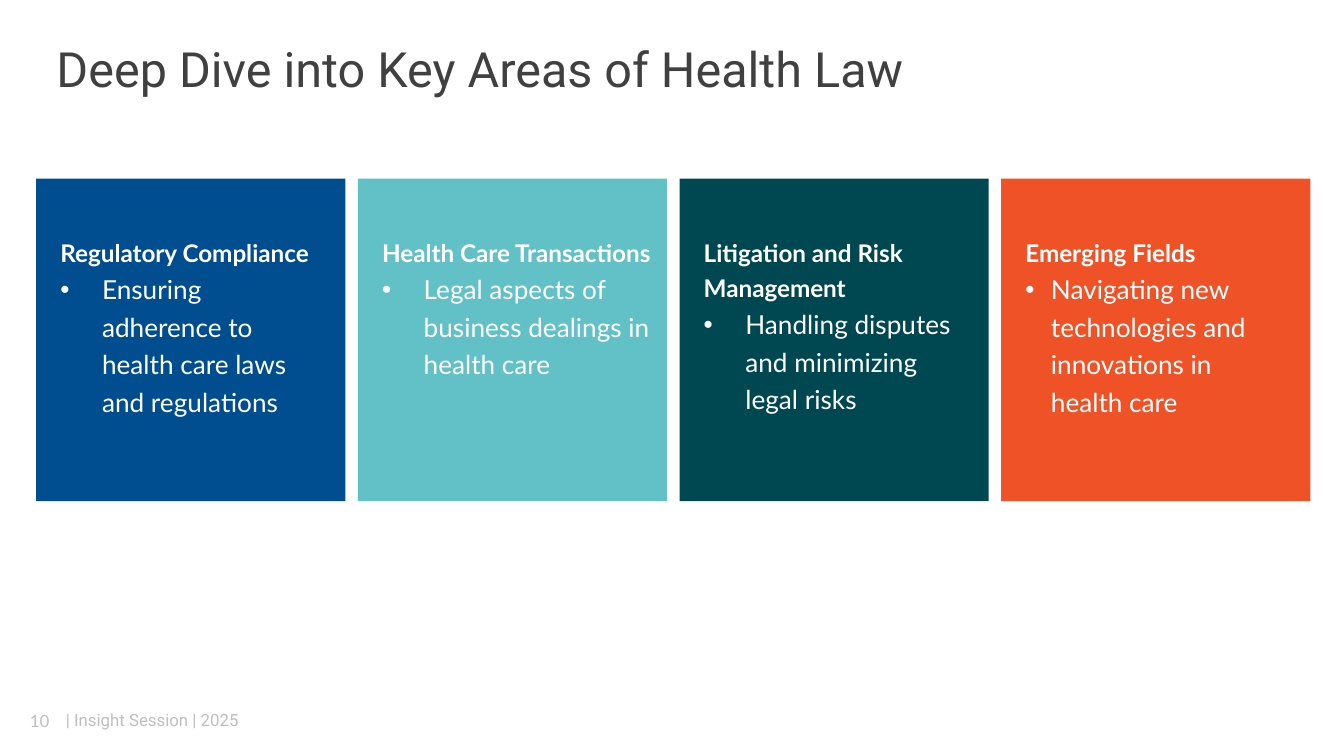
from lxml.etree import SubElement
from pptx import Presentation
from pptx.dml.color import RGBColor
from pptx.enum.shapes import MSO_SHAPE as Shape
from pptx.enum.text import MSO_ANCHOR as Anchor, MSO_AUTO_SIZE as Fit, PP_ALIGN as Align
from pptx.oxml.ns import qn
from pptx.util import Inches, Pt

TITLE = "Deep Dive into Key Areas of Health Law"
CARDS = [
    ("004D8F", "Regulatory Compliance",
     "Ensuring adherence to health care laws and regulations", 1.93, 0.31),
    ("62C0C7", "Health Care Transactions",
     "Legal aspects of business dealings in health care", 2.07, 0.31),
    ("004851", "Litigation and Risk Management",
     "Handling disputes and minimizing legal risks", 1.93, 0.31),
    ("F05228", "Emerging Fields",
     "Navigating new technologies and innovations in health care", 1.93, 0.19),
]
FOOT = [
    ("10", "Lato", (0.08, 5.21, 0.43, 0.3), (0.1, 0.05), Align.CENTER),
    ("| Insight Session | 2025", "Roboto", (0.49, 5.28, 2, 0.15), (0, 0), Align.LEFT),
]
LEFT, LAST, TOP, WIDE, HIGH = 0.27, 7.45, 1.33, 2.3, 2.4


def tint(code):
    """Turn a hex string into a colour."""
    return RGBColor.from_string(code)


def write(para, text, face, size, code, bold=False):
    """Add one styled run to a paragraph."""
    run = para.add_run()
    run.text = text
    font = run.font
    font.name, font.size, font.bold = face, Pt(size), bold
    font.color.rgb = tint(code)


def setup(frame, inset, anchor):
    """Set wrapping, insets and anchor of a text frame."""
    frame.word_wrap = True
    frame.auto_size = Fit.NONE
    frame.vertical_anchor = anchor
    frame.margin_left = frame.margin_right = Inches(inset[0])
    frame.margin_top = frame.margin_bottom = Inches(inset[1])
    return frame


def place(shape, box):
    """Move a shape to a box given in inches."""
    shape.left, shape.top, shape.width, shape.height = map(Inches, box)


def dot(para, indent):
    """Give a paragraph a hanging round bullet."""
    props = para._p.get_or_add_pPr()
    props.set("marL", str(Inches(indent)))
    props.set("indent", str(-Inches(indent)))
    SubElement(props, qn("a:buFont"), typeface="Arial")
    SubElement(props, qn("a:buChar"), char="•")


def card(slide, left, code, head, body, width, indent):
    """Draw one coloured card with its heading and bullet."""
    tile = slide.shapes.add_shape(Shape.RECTANGLE, *map(Inches, (left, TOP, WIDE, HIGH)))
    tile.shadow.inherit = False
    tile.fill.solid()
    tile.fill.fore_color.rgb = tint(code)
    tile.line.fill.background()
    box = slide.shapes.add_textbox(*map(Inches, (left + 0.18, 1.68, width, 1.5)))
    frame = setup(box.text_frame, (0, 0.05), Anchor.TOP)
    para = frame.paragraphs[0]
    para.line_spacing = 1.2
    write(para, head, "Lato", 13, "FFFFFF", True)
    item = frame.add_paragraph()
    dot(item, indent)
    item.line_spacing = 1.2
    write(item, body, "Lato", 14, "FFFFFF")


def main():
    """Build and save the slide."""
    deck = Presentation()
    deck.slide_width, deck.slide_height = Inches(10), Inches(10 * 9 / 16)
    slide = deck.slides.add_slide(deck.slide_layouts[5])
    title = slide.shapes.title
    place(title, (0.42, 0.31, 9.15, 0.45))
    para = setup(title.text_frame, (0, 0), Anchor.MIDDLE).paragraphs[0]
    para.alignment, para.line_spacing = Align.LEFT, 0.9
    write(para, TITLE, "Roboto", 26, "404040")
    for text, face, box, inset, align in FOOT:
        note = slide.shapes.add_textbox(*map(Inches, box))
        para = setup(note.text_frame, inset, Anchor.MIDDLE).paragraphs[0]
        para.alignment = align
        write(para, text, face, 9, "BFBFBF")
    pitch = (LAST - LEFT) / (len(CARDS) - 1)
    for i, data in enumerate(CARDS):
        card(slide, LEFT + i * pitch, *data)
    deck.save("out.pptx")


if __name__ == "__main__":
    main()
